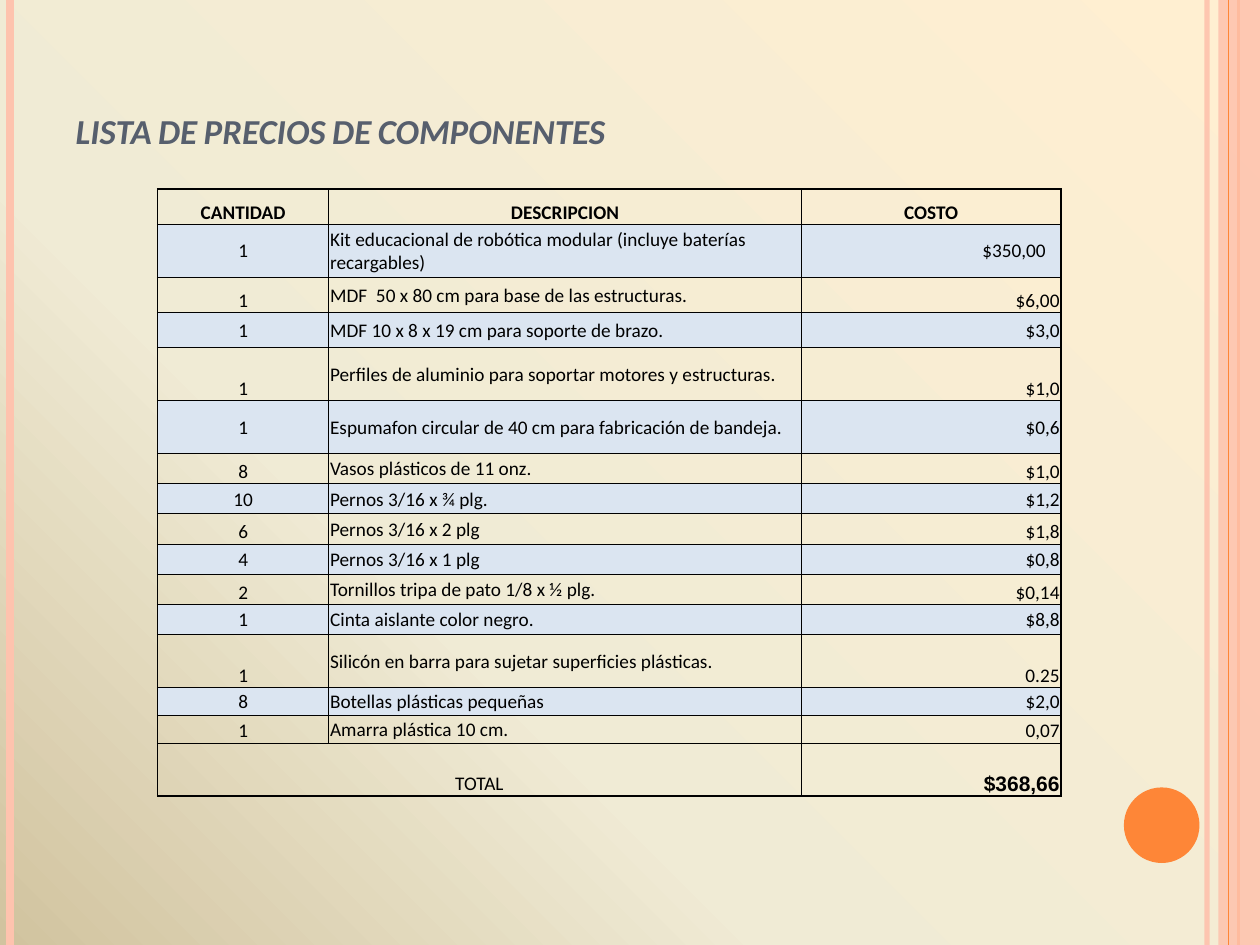
"""Build the component price list slide."""
from typing import NamedTuple

from lxml import etree
from pptx import Presentation
from pptx import util as u
from pptx.dml.color import RGBColor
from pptx.enum import shapes, text
from pptx.oxml import parse_xml
from pptx.oxml.ns import nsdecls, qn

W, H = 10, 7.5
PINK, ORANGE, BLACK, BAND = "FEC3AE", "FE8637", "000000", "DBE5F1"
ALIGN, ANCHOR = text.PP_ALIGN, text.MSO_ANCHOR
STOPS = [(0, "FFEFD1"), (65, "F0EBD5"), (100, "D1C39F")]
COLUMNS = [1.36, 3.75, 2.06]
COLUMN_ALIGN = [ALIGN.CENTER, ALIGN.LEFT, ALIGN.RIGHT]
TALL, MEDIUM, LOW, SLIM = 0.42, 0.28, 0.24, 0.22


class Stripe(NamedTuple):
    """Full-height line at a percentage of the slide width."""
    left: float
    color: str
    width: float
    alpha: int = 100


class Item(NamedTuple):
    """One row of the price list."""
    height: float
    quantity: str
    description: str
    cost: str


STRIPES = [
    Stripe(95.8, PINK, 3, 93),
    Stripe(0.8, PINK, 4.5),
    Stripe(98.3, ORANGE, 1.5),
    Stripe(97.5, ORANGE, 0.75),
]
ITEMS = [
    Item(MEDIUM, "CANTIDAD", "DESCRIPCION", "COSTO"),
    Item(TALL, "1", "Kit educacional de robótica modular (incluye baterías recargables)", "$350,00"),
    Item(MEDIUM, "1", "MDF  50 x 80 cm para base de las estructuras.", "$6,00"),
    Item(MEDIUM, "1", "MDF 10 x 8 x 19 cm para soporte de brazo.", "$3,0"),
    Item(TALL, "1", "Perfiles de aluminio para soportar motores y estructuras.", "$1,0"),
    Item(TALL, "1", "Espumafon circular de 40 cm para fabricación de bandeja.", "$0,6"),
    Item(LOW, "8", "Vasos plásticos de 11 onz.", "$1,0"),
    Item(LOW, "10", "Pernos 3/16 x ¾ plg.", "$1,2"),
    Item(LOW, "6", "Pernos 3/16 x 2 plg", "$1,8"),
    Item(LOW, "4", "Pernos 3/16 x 1 plg", "$0,8"),
    Item(LOW, "2", "Tornillos tripa de pato 1/8 x ½ plg.", "$0,14"),
    Item(LOW, "1", "Cinta aislante color negro.", "$8,8"),
    Item(TALL, "1", "Silicón en barra para sujetar superficies plásticas.", "0.25"),
    Item(SLIM, "8", "Botellas plásticas pequeñas", "$2,0"),
    Item(SLIM, "1", "Amarra plástica 10 cm.", "0,07"),
    Item(TALL, "TOTAL", "", "$368,66"),
]


def rgb(color: str) -> RGBColor:
    """Turn a hex string into a colour."""
    return RGBColor.from_string(color)


def x(share: float) -> u.Emu:
    """Return a percentage of the slide width."""
    return u.Inches(W * share / 100)


def y(share: float) -> u.Emu:
    """Return a percentage of the slide height."""
    return u.Inches(H * share / 100)


def write(tf, content: str, *, size: float = 11, font: str = "Calibri", color: str = BLACK,
          bold: bool = False, italic: bool = False, small_caps: bool = False,
          align=ALIGN.LEFT) -> None:
    """Write one formatted paragraph into a text frame."""
    p = tf.paragraphs[0]
    p.alignment = align
    r = p.add_run()
    r.text = content
    r.font.size, r.font.name = u.Pt(size), font
    r.font.bold, r.font.italic = bold, italic
    r.font.color.rgb = rgb(color)
    if small_caps:
        r._r.get_or_add_rPr().set("cap", "small")


def set_alpha(sp, alpha: int) -> None:
    """Make the first colour of a shape partly transparent."""
    color = sp._element.spPr.find(".//" + qn("a:srgbClr"))
    etree.SubElement(color, qn("a:alpha")).set("val", str(alpha * 1000))


def paint_background(s) -> None:
    """Give the slide a radial gradient centred on its top right corner."""
    s.background.fill.gradient()
    old = s._element.find(".//" + qn("a:gradFill"))
    stops = "".join(f'<a:gs pos="{pos * 1000}"><a:srgbClr val="{color}"/></a:gs>'
                    for pos, color in STOPS)
    old.getparent().replace(old, parse_xml(
        f'<a:gradFill {nsdecls("a")} rotWithShape="1"><a:gsLst>{stops}</a:gsLst>'
        '<a:path path="circle"><a:fillToRect l="100000" b="100000"/></a:path></a:gradFill>'))


def draw_stripe(s, stripe: Stripe) -> None:
    """Draw a vertical stripe over the whole slide height."""
    sp = s.shapes.add_connector(shapes.MSO_CONNECTOR.STRAIGHT,
                                x(stripe.left), 0, x(stripe.left), y(100))
    sp.line.color.rgb = rgb(stripe.color)
    sp.line.width = u.Pt(stripe.width)
    if stripe.alpha < 100:
        set_alpha(sp, stripe.alpha)
    etree.SubElement(sp._element.spPr, qn("a:effectLst"))


def draw_shape(s, kind, left: float, top: float, width: float, height: float,
               color: str, alpha: int = 100) -> None:
    """Draw a plain filled shape placed by percentages."""
    sp = s.shapes.add_shape(kind, x(left), y(top), x(width), y(height))
    sp.shadow.inherit = False
    sp.fill.solid()
    sp.fill.fore_color.rgb = rgb(color)
    sp.line.fill.background()
    if alpha < 100:
        set_alpha(sp, alpha)


def set_borders(cell, **widths: float) -> None:
    """Set the four cell borders, in points, in schema order."""
    tc_pr = cell._tc.get_or_add_tcPr()
    for i, side in enumerate("LRTB"):
        tc_pr.insert(i, parse_xml(
            f'<a:ln{side} {nsdecls("a")} w="{u.Pt(widths[side])}"><a:solidFill>'
            f'<a:srgbClr val="{BLACK}"/></a:solidFill></a:ln{side}>'))


def format_cell(cell, row: int, col: int) -> None:
    """Apply margins, anchor, banding and borders to a cell."""
    last = len(ITEMS) - 1
    banded = row % 2 == 1 and row < last
    cell.margin_left = cell.margin_right = cell.margin_top = u.Inches(0.01)
    cell.margin_bottom = 0
    centred = banded or (col == 1 and 0 < row < last)
    cell.vertical_anchor = ANCHOR.MIDDLE if centred else ANCHOR.BOTTOM
    if banded:
        cell.fill.solid()
        cell.fill.fore_color.rgb = rgb(BAND)
    else:
        cell.fill.background()
    set_borders(cell, L=1 if col == 0 else 0.5, R=1 if col == 2 else 0.5,
                T=1 if row < 2 else 0.5, B=1 if row in (0, last) else 0.5)


def draw_price_table(s) -> None:
    """Draw the price list with its header and total rows."""
    last = len(ITEMS) - 1
    frame = s.shapes.add_table(len(ITEMS), len(COLUMNS), x(12.5), y(20),
                               u.Inches(sum(COLUMNS)), u.Inches(sum(i.height for i in ITEMS)))
    table = frame.table
    table.first_row = table.horz_banding = False
    for column, width in zip(table.columns, COLUMNS):
        column.width = u.Inches(width)
    for row, item in enumerate(ITEMS):
        table.rows[row].height = u.Inches(item.height)
        for col, content in enumerate(item[1:]):
            cell = table.cell(row, col)
            format_cell(cell, row, col)
            if content:
                grand_total = row == last and col == 2
                write(cell.text_frame, content, bold=row == 0 or grand_total,
                      size=12 if grand_total else 11,
                      font="Arial" if grand_total else "Calibri",
                      align=ALIGN.CENTER if row == 0 else COLUMN_ALIGN[col])
    table.cell(1, 2).margin_right = u.Inches(0.12)
    table.cell(last, 0).merge(table.cell(last, 1))


def main() -> None:
    """Build and save the slide."""
    prs = Presentation()
    prs.slide_width, prs.slide_height = u.Inches(W), u.Inches(H)
    s = prs.slides.add_slide(prs.slide_layouts[5])
    paint_background(s)
    for stripe in STRIPES[:3]:
        draw_stripe(s, stripe)
    draw_shape(s, shapes.MSO_SHAPE.RECTANGLE, 96.7, 0, 3.3, 100, PINK, 87)
    draw_stripe(s, STRIPES[3])
    draw_shape(s, shapes.MSO_SHAPE.OVAL, 89.2, 83.33, 6, 8, ORANGE)
    draw_price_table(s)
    title = s.shapes.title
    title.left, title.top, title.width, title.height = x(5), y(4), x(81.7), y(12.67)
    title.text_frame.vertical_anchor = ANCHOR.BOTTOM
    write(title.text_frame, "LISTA DE PRECIOS DE COMPONENTES", size=20, color="575F6D",
          bold=True, italic=True, small_caps=True)
    prs.save("out.pptx")


if __name__ == "__main__":
    main()
